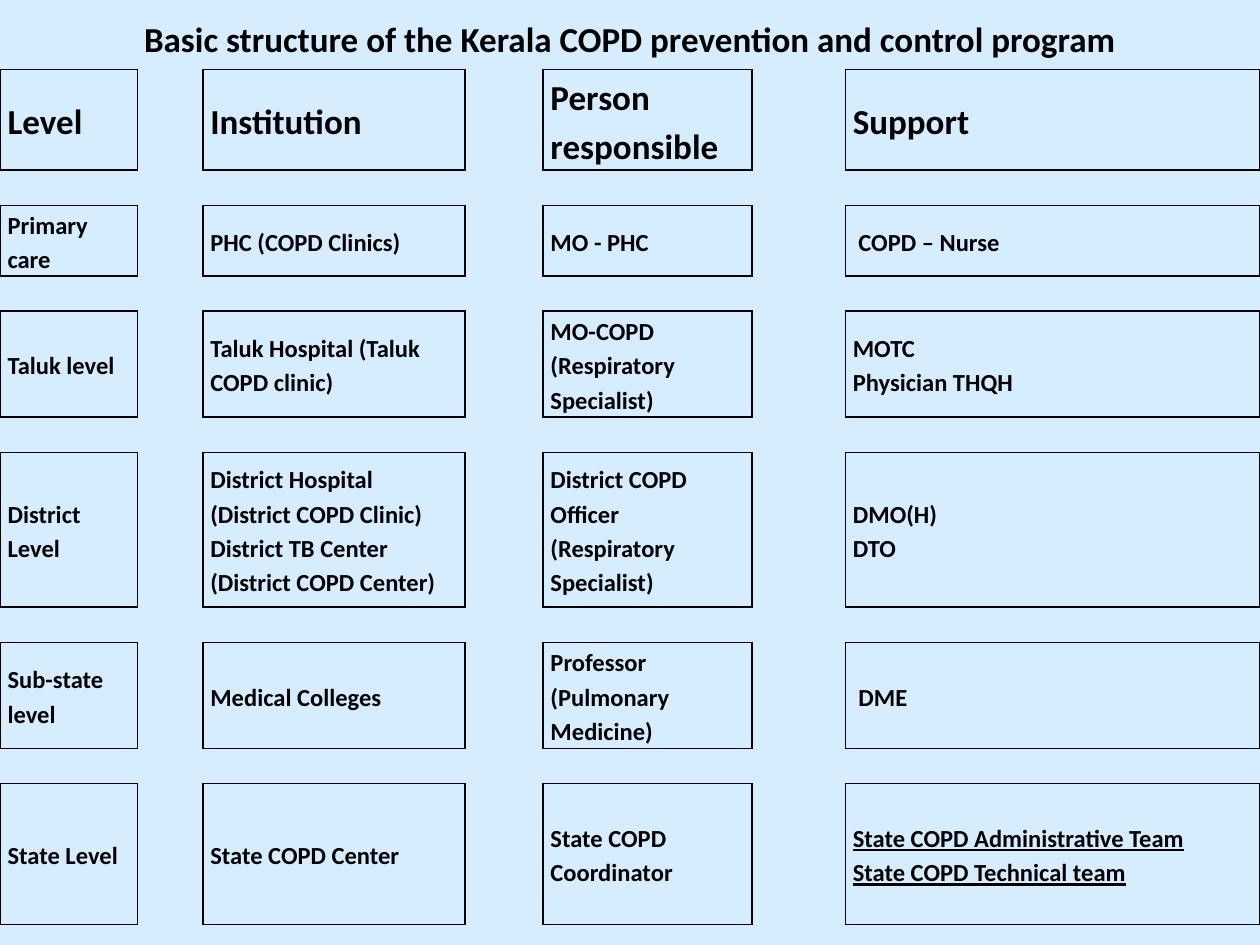
from dataclasses import dataclass

from lxml import etree
from pptx import Presentation
from pptx import util as u
from pptx.dml import color
from pptx.enum import text
from pptx.oxml import ns

WIDTH, HEIGHT = u.Inches(10), u.Inches(7.5)
COLORS = {"background": "D6ECFF", "ink": "000000"}
FONT = {"name": "Calibri", "bold": True}
MARGINS = {"margin_left": u.Inches(0.06), "margin_right": u.Inches(0.06),
           "margin_top": 0, "margin_bottom": 0}
COLUMN_INCHES = [1.09, 2.08, 1.66, 3.29]
GAP_COLUMN_INCHES = [0.52, 0.62, 0.74]
GAP_ROW_INCHES = 0.28
TITLE = "Basic structure of the Kerala COPD prevention and control program"


@dataclass
class Level:
    height: float
    cells: list[str]
    size: int = 14
    underlined_column: int | None = None


LEVELS = [
    Level(0.8, ["Level", "Institution", "Person responsible", "Support"], 20),
    Level(0.56, ["Primary care", "PHC (COPD Clinics)", "MO - PHC", " COPD – Nurse"]),
    Level(0.84, ["Taluk level", "Taluk Hospital (Taluk COPD clinic)",
                 "MO-COPD (Respiratory Specialist)", "MOTC\nPhysician THQH"]),
    Level(1.23, ["District Level",
                 "District Hospital (District COPD Clinic)\n"
                 "District TB Center (District COPD Center)",
                 "District COPD Officer (Respiratory Specialist)", "DMO(H)\nDTO"]),
    Level(0.84, ["Sub-state level", "Medical Colleges",
                 "Professor (Pulmonary Medicine)", " DME"]),
    Level(1.12, ["State Level", "State COPD Center", "State COPD Coordinator",
                 "State COPD Administrative Team\nState COPD Technical team"],
          underlined_column=3),
]


def apply_format(target, values: dict) -> None:
    for name, value in values.items():
        setattr(target, name, value)


def format_font(font, size: int, **extra) -> None:
    apply_format(font, {**FONT, "size": u.Pt(size), **extra})
    font.color.rgb = color.RGBColor.from_string(COLORS["ink"])


def draw_borders(cell, visible_sides: str) -> None:
    properties = cell._tc.get_or_add_tcPr()
    for side in "LRTB":
        line = etree.SubElement(properties, ns.qn(f"a:ln{side}"), w=str(u.Pt(1)))
        if side in visible_sides:
            fill = etree.SubElement(line, ns.qn("a:solidFill"))
            etree.SubElement(fill, ns.qn("a:srgbClr"), val=COLORS["ink"])
        else:
            etree.SubElement(line, ns.qn("a:noFill"))


def write_cell(cell, level: Level, column: int) -> None:
    cell.text = level.cells[column]
    for paragraph in cell.text_frame.paragraphs:
        paragraph.line_spacing = 1.15
        underline = True if column == level.underlined_column else None
        format_font(paragraph.runs[0].font, level.size, underline=underline)


def add_title(slide) -> None:
    title = slide.shapes.title
    apply_format(title, {"left": 0, "top": 0, "width": WIDTH, "height": u.Inches(0.94)})
    frame = title.text_frame
    frame.text = TITLE
    apply_format(frame, {"word_wrap": True, "auto_size": text.MSO_AUTO_SIZE.NONE,
                         "vertical_anchor": text.MSO_ANCHOR.MIDDLE,
                         "margin_bottom": u.Inches(0.38)})
    paragraph = frame.paragraphs[0]
    paragraph.alignment = text.PP_ALIGN.CENTER
    format_font(paragraph.runs[0].font, 20)


def interleave(items: list[float], gaps: list[float]) -> list[float]:
    pairs = zip(items, gaps)
    return [value for pair in pairs for value in pair] + items[-1:]


def add_level_table(slide) -> None:
    widths = interleave(COLUMN_INCHES, GAP_COLUMN_INCHES)
    heights = interleave([level.height for level in LEVELS],
                         [GAP_ROW_INCHES] * (len(LEVELS) - 1))
    table = slide.shapes.add_table(len(heights), len(widths), 0, u.Inches(0.55),
                                   WIDTH, u.Inches(sum(heights))).table
    apply_format(table, {"first_row": False, "horz_banding": False})
    for column, width in zip(table.columns, widths):
        column.width = u.Inches(width)
    for row_index, (row, height) in enumerate(zip(table.rows, heights)):
        row.height = u.Inches(height)
        for column_index, cell in enumerate(row.cells):
            in_level, in_column = row_index % 2 == 0, column_index % 2 == 0
            apply_format(cell, {**MARGINS, "vertical_anchor": text.MSO_ANCHOR.MIDDLE})
            draw_borders(cell, "LR" * in_level + "TB" * in_column)
            cell.fill.background()
            if in_level and in_column:
                write_cell(cell, LEVELS[row_index // 2], column_index // 2)
            else:
                paragraph = cell.text_frame.paragraphs[0]
                etree.SubElement(paragraph._p, ns.qn("a:endParaRPr"), sz="1000")


def main() -> None:
    presentation = Presentation()
    apply_format(presentation, {"slide_width": WIDTH, "slide_height": HEIGHT})
    slide = presentation.slides.add_slide(presentation.slide_layouts[5])
    background = slide.background.fill
    background.solid()
    background.fore_color.rgb = color.RGBColor.from_string(COLORS["background"])
    add_title(slide)
    add_level_table(slide)
    presentation.save("out.pptx")


if __name__ == "__main__":
    main()
